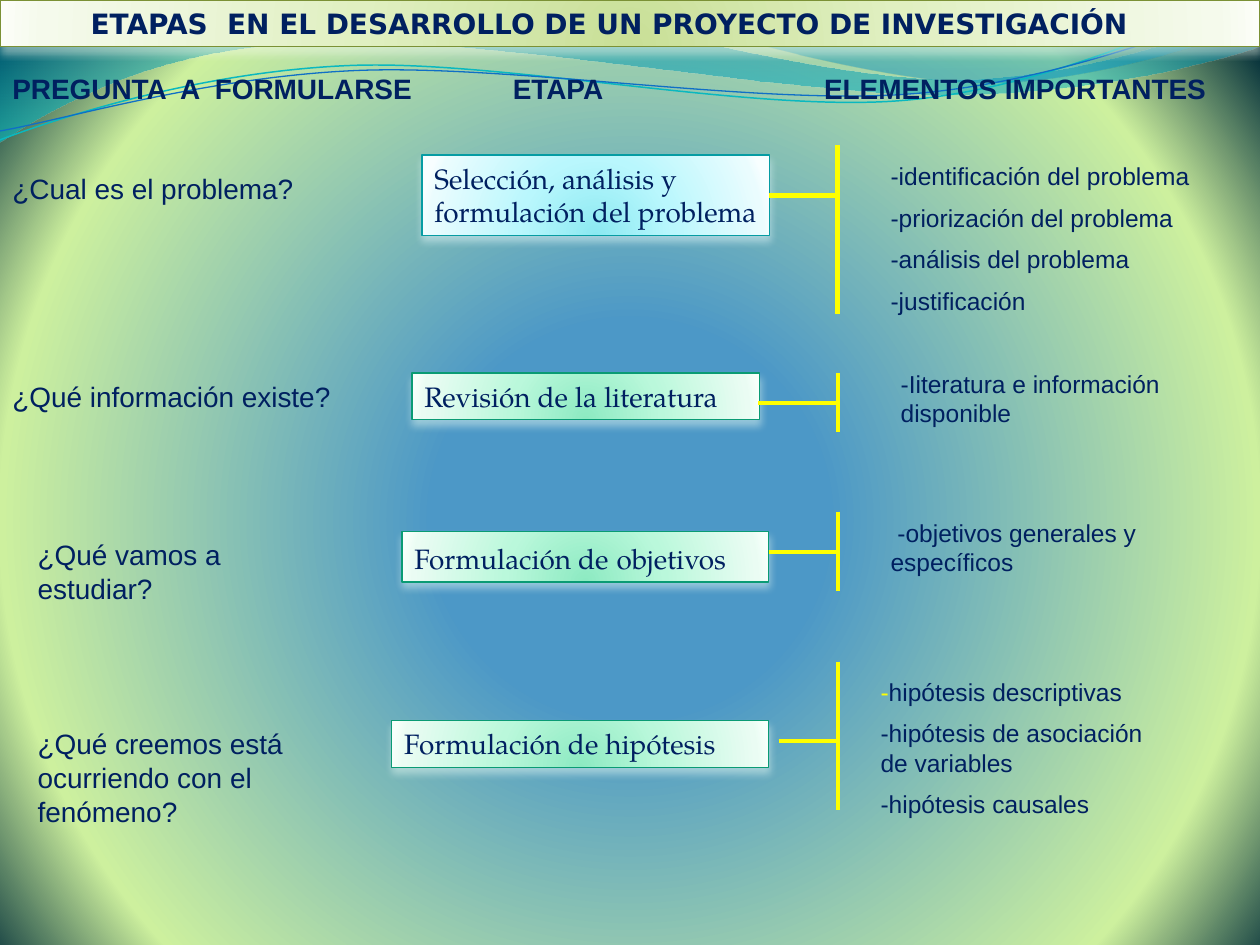
import math

import pptx
import pptx.dml.color
import pptx.enum.shapes
import pptx.enum.text
import pptx.oxml
import pptx.oxml.ns
import pptx.util
from pptx.util import Inches

COLOURS = {"navy": "002060", "yellow": "FFFF00", "teal_line": "0AB8BF", "blue_line": "0F6FC6"}
NAMESPACE = 'xmlns:a="http://schemas.openxmlformats.org/drawingml/2006/main"'
rgb = pptx.dml.color.RGBColor.from_string
qn = pptx.oxml.ns.qn


def set_gradient(fill, parent, stops, focus=None):
    """Stops are (position %, colour, opacity %); focus is left, top, right, bottom %."""
    fill.solid()
    marks = "".join(
        f'<a:gs pos="{pos * 1000}"><a:srgbClr val="{colour}"><a:alpha val="{alpha * 1000}"/></a:srgbClr></a:gs>'
        for pos, colour, alpha in stops)
    if focus:
        left, top, right, bottom = (value * 1000 for value in focus)
        course = (f'<a:path path="circle"><a:fillToRect l="{left}" t="{top}" '
                  f'r="{right}" b="{bottom}"/></a:path>')
    else:
        course = '<a:lin ang="5400000" scaled="1"/>'
    parent.replace(parent.find(qn("a:solidFill")), pptx.oxml.parse_xml(
        f'<a:gradFill {NAMESPACE} rotWithShape="1"><a:gsLst>{marks}</a:gsLst>{course}</a:gradFill>'))


def write(box, lines, font, size, bold=False, indent=0.0):
    """Fill a box with paragraphs; a bar in a line separates its spans."""
    frame = box.text_frame
    frame.word_wrap = True
    frame.auto_size = pptx.enum.text.MSO_AUTO_SIZE.SHAPE_TO_FIT_TEXT
    frame.vertical_anchor = pptx.enum.text.MSO_ANCHOR.TOP
    frame.margin_left = Inches(0.1 + indent)
    for number, line in enumerate(lines):
        para = frame.add_paragraph() if number else frame.paragraphs[0]
        para.alignment = pptx.enum.text.PP_ALIGN.LEFT
        if number:
            para.space_before = pptx.util.Pt(7)
        para.font.name = font
        para.font.size = pptx.util.Pt(size)
        para.font.bold = bold
        para.font.color.rgb = rgb(COLOURS["navy"])
        for part in line.split("|"):
            para.add_run().text = part
    return frame.paragraphs[0].runs


deck = pptx.Presentation()
deck.slide_width, deck.slide_height = Inches(10), Inches(7.5)
page = deck.slides.add_slide(deck.slide_layouts[6])

# Background
background = page.background.fill
set_gradient(background, page._element.cSld.find(qn("p:bg")).find(qn("p:bgPr")),
             [(25, "4C98C7", 100), (80, "CDF09E", 52), (100, "002C38", 100)], (10, 110, 10, 100))

# Waves: start, pieces (a corner, or two controls and an end), gradient, line, centre of tilt
TILT = 2.7
waves = [
    ((0, -0.01),
     [(4.4, -0.01), (4.76, 0.17, 6.64, 0.63, 7.58, 0.63), (8.53, 0.63, 9.58, 0.26, 10, 0.09),
      (10.01, 0.36), (9.83, 0.44, 8.7, 0.76, 7.46, 0.75), (6.22, 0.75, 3.82, 0.28, 2.57, 0.34),
      (1.29, 0.35, 0.46, 0.83, -0.01, 1.13)],
     [(0, "0074A1", 45), (100, "00C6CF", 55)], None, None),
    ((4.79, -0.01),
     [(5.09, 0.11, 6.82, 0.62, 7.69, 0.65), (8.56, 0.69, 9.61, 0.32, 10, 0.21), (10, 0)],
     [(0, "00A1A9", 30), (80, "008BBF", 45)], None, None),
    ((0, 1.11),
     [(0.48, 0.93, 1.58, 0.57, 2.77, 0.52), (3.95, 0.47, 5.93, 0.89, 7.13, 0.8),
      (8.33, 0.71, 9.38, 0.15, 9.98, -0.02)], None, ("teal_line", 0.85), (4.99, 0.58)),
    ((0, 1.04),
     [(0.47, 0.96, 1.64, 0.61, 2.83, 0.56), (4.03, 0.51, 5.97, 0.83, 7.17, 0.75),
      (8.36, 0.67, 9.41, 0.21, 10, 0.06)], None, ("blue_line", 0.75), (5, 0.59)),
]
for start, pieces, stops, stroke, centre in waves:
    points = [start] + [pair for piece in pieces for pair in zip(piece[::2], piece[1::2])]
    if centre:
        cx, cy = centre
        cos, sin = math.cos(math.radians(TILT)), math.sin(math.radians(TILT))
        points = [(cx + (x - cx) * cos - (y - cy) * sin, cy + (x - cx) * sin + (y - cy) * cos)
                  for x, y in points]
    corners = [(Inches(x), Inches(y)) for x, y in points]
    builder = page.shapes.build_freeform(*corners[0])
    builder.add_line_segments(corners[1:], close=stops is not None)
    wave = builder.convert_to_shape()
    wave.shadow.inherit = False
    # Each run of three segments that belongs to a curve becomes one cubic
    segments = iter(list(wave._element.iter(qn("a:lnTo"))))
    for piece in pieces:
        first = next(segments)
        if len(piece) == 6:
            first.tag = qn("a:cubicBezTo")
            for _ in range(2):
                extra = next(segments)
                first.append(extra[0])
                extra.getparent().remove(extra)
    if stops:
        set_gradient(wave.fill, wave._element.spPr, stops)
        wave.line.fill.background()
    else:
        wave.rotation = 360 - TILT
        wave.fill.background()
        wave.line.color.rgb = rgb(COLOURS[stroke[0]])
        wave.line.width = pptx.util.Pt(stroke[1])

# Title banner and stage boxes: gradient colours and border
olive = (("C9DF97", "E0F0C1", "F5FAEC", "FCFEF8"), "7B9135")
aqua = (("8BE9F1", "B9F7FD", "EAFCFE", "F8FEFF"), "069CA3")
mint = (("8DEAC2", "BAF8DB", "EAFCF3", "F7FFFB"), "0A9B74")
serif = "TeX Gyre Pagella"
panels = [
    (0, 0, 10, 0.37, olive, "ETAPAS  EN EL DESARROLLO DE UN PROYECTO DE INVESTIGACIÓN", "DejaVu Sans", 0.62),
    (3.35, 1.23, 2.76, 0.64, aqua, "Selección, análisis y formulación del problema", serif, 0),
    (3.27, 2.96, 2.76, 0.37, mint, "Revisión de la literatura", serif, 0),
    (3.19, 4.22, 2.91, 0.4, mint, "Formulación de| |objetivos", serif, 0),
    (3.11, 5.72, 2.99, 0.37, mint, "Formulación de hipótesis", serif, 0),
]
for left, top, width, height, (tints, border), text, font, indent in panels:
    panel = page.shapes.add_shape(pptx.enum.shapes.MSO_SHAPE.RECTANGLE,
                                  Inches(left), Inches(top), Inches(width), Inches(height))
    set_gradient(panel.fill, panel._element.spPr,
                 [(pos, tint, 100) for pos, tint in zip((0, 43, 93, 100), tints)], (50, 130, 50, -30))
    panel.line.color.rgb = rgb(border)
    panel.line.width = pptx.util.Pt(0.75)
    panel.shadow.inherit = False
    panel._element.spPr.find(qn("a:effectLst")).append(pptx.oxml.parse_xml(
        f'<a:outerShdw {NAMESPACE} blurRad="57150" dist="38100" dir="5400000" algn="ctr" rotWithShape="0">'
        f'<a:srgbClr val="{tints[2]}"><a:alpha val="48000"/></a:srgbClr></a:outerShdw>'))
    spans = write(panel, [text], font, 16, font != serif, indent)
    if len(spans) > 1:
        spans[1].font.size = pptx.util.Pt(18)

# Column headings, questions and key elements
notes = [
    (0, 0.52, 3.74, 0.37, ["PREGUNTA  A  FORMULARSE"], 16, True, 0),
    (3.66, 0.52, 1.65, 0.37, ["ETAPA"], 16, True, 0.31),
    (5.94, 0.52, 4.06, 0.37, ["ELEMENTOS IMPORTANTES"], 16, True, 0.5),
    (0, 1.31, 2.72, 0.37, ["¿Cual es el problema?"], 16, False, 0),
    (0, 2.96, 2.87, 0.37, ["¿Qué información existe?"], 16, False, 0),
    (0.2, 4.22, 2.52, 0.64, ["¿Qué vamos a estudiar?"], 16, False, 0),
    (0.2, 5.72, 2.52, 0.9, ["¿Qué creemos está ocurriendo con el fenómeno?"], 16, False, 0),
    (6.97, 1.23, 2.6, 1.4, ["-identificación del problema", "-priorización del problema",
                            "-análisis del problema", "-justificación"], 14, False, 0),
    (7.05, 2.88, 2.6, 0.57, ["-Iiteratura e información disponible"], 14, False, 0),
    (6.97, 4.06, 3.03, 0.57, [" -objetivos generales y específicos"], 14, False, 0),
    (6.89, 5.32, 2.44, 1.28, ["-|hipótesis descriptivas", "-hipótesis de asociación de variables",
                              "-hipótesis causales"], 14, False, 0),
]
for left, top, width, height, lines, size, bold, indent in notes:
    box = page.shapes.add_textbox(Inches(left), Inches(top), Inches(width), Inches(height))
    spans = write(box, lines, "Arial", size, bold, indent)
    if len(spans) > 1:
        spans[0].font.color.rgb = rgb(COLOURS["yellow"])

# Brackets: stem start, bar top and bottom, stem and bar weights
BAR_X = 6.65
brackets = [
    (6.1, 1.55, 1.15, 2.49, 2.75, 2.75),
    (6.02, 3.2, 2.96, 3.43, 2.5, 2.5),
    (6.1, 4.38, 4.06, 4.69, 2.25, 2.5),
    (6.18, 5.88, 5.25, 6.43, 2.25, 2.25),
]
for stem_x, stem_y, top, bottom, stem_weight, bar_weight in brackets:
    for x1, y1, x2, y2, weight in ((stem_x, stem_y, BAR_X, stem_y, stem_weight),
                                   (BAR_X, top, BAR_X, bottom, bar_weight)):
        rule = page.shapes.add_connector(pptx.enum.shapes.MSO_CONNECTOR.STRAIGHT,
                                         Inches(x1), Inches(y1), Inches(x2), Inches(y2))
        rule.line.color.rgb = rgb(COLOURS["yellow"])
        rule.line.width = pptx.util.Pt(weight)
        rule._element.spPr.append(pptx.oxml.parse_xml(f"<a:effectLst {NAMESPACE}/>"))

deck.save("out.pptx")
